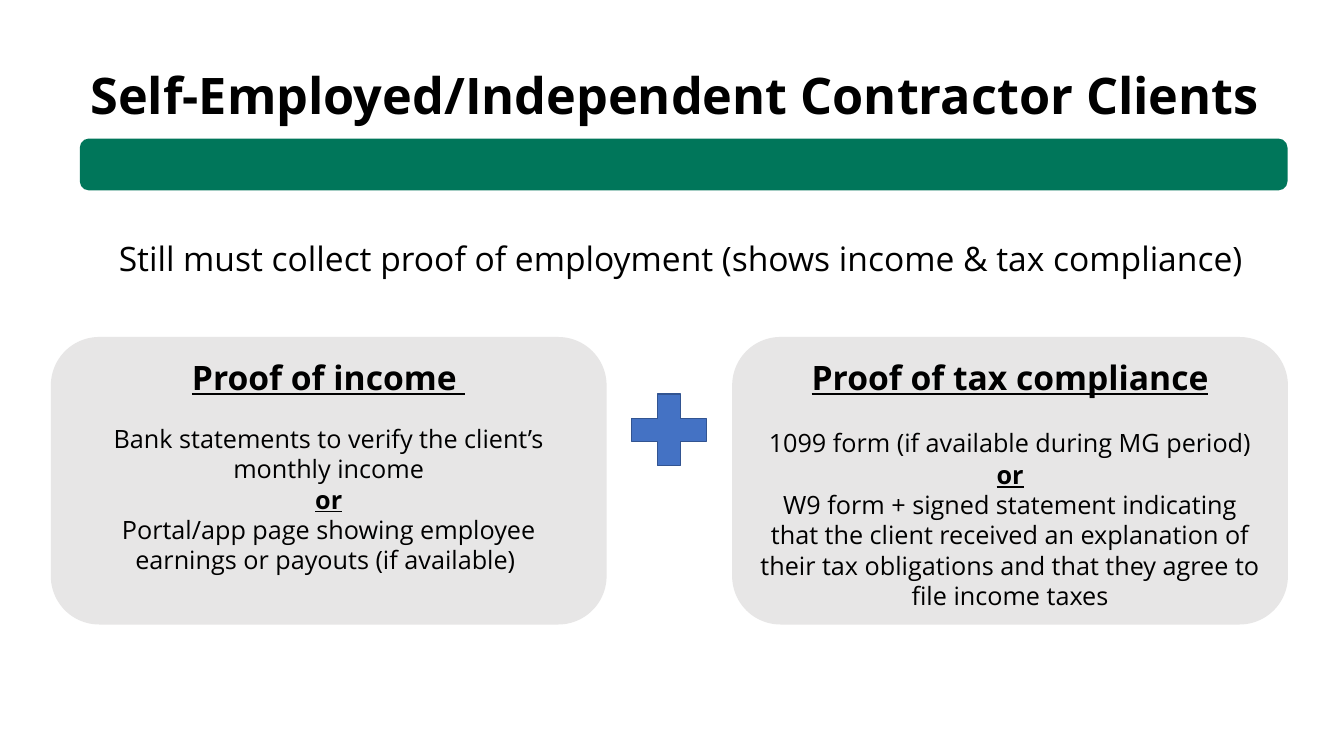
from dataclasses import dataclass

from pptx import Presentation
from pptx.dml.color import RGBColor
from pptx.enum.shapes import MSO_SHAPE
from pptx.enum.text import MSO_ANCHOR, PP_ALIGN
from pptx.util import Cm, Pt


@dataclass(frozen=True)
class Theme:
    font: str = "Open Sans"
    ink: str = "000000"
    green: str = "00765A"
    grey: str = "E7E6E6"
    blue: str = "4472C4"
    blue_edge: str = "325491"
    title_size: int = 36
    heading_size: int = 24
    body_size: int = 18


def write(paragraph, text, theme, size, strong=False, underline=False,
          align=PP_ALIGN.CENTER, gap_after=0):
    paragraph.alignment = align
    paragraph.space_after = Pt(gap_after)
    run = paragraph.add_run()
    run.text = text
    run.font.name = theme.font
    run.font.size = Pt(size)
    run.font.bold = strong
    run.font.underline = underline
    run.font.color.rgb = RGBColor.from_string(theme.ink)


class SlideBuilder:
    def __init__(self, slide, theme):
        self.slide = slide
        self.theme = theme

    def text(self, box, text, size, **style):
        frame = self.slide.shapes.add_textbox(*map(Cm, box)).text_frame
        frame.word_wrap = True
        write(frame.paragraphs[0], text, self.theme, size, **style)

    def shape(self, kind, box, fill, edge):
        shape = self.slide.shapes.add_shape(kind, *map(Cm, box))
        shape.shadow.inherit = False
        shape.fill.solid()
        shape.fill.fore_color.rgb = RGBColor.from_string(fill)
        shape.line.color.rgb = RGBColor.from_string(edge)
        shape.line.width = Pt(1)
        return shape

    def card(self, box, heading, options, heading_gap, option_gap):
        theme = self.theme
        card = self.shape(MSO_SHAPE.ROUNDED_RECTANGLE, box, theme.grey, theme.grey)
        frame = card.text_frame
        frame.word_wrap = True
        frame.vertical_anchor = MSO_ANCHOR.TOP
        write(frame.paragraphs[0], heading, theme, theme.heading_size,
              strong=True, underline=True, gap_after=heading_gap)
        first, joiner, second = options
        write(frame.add_paragraph(), first, theme, theme.body_size,
              gap_after=option_gap)
        write(frame.add_paragraph(), joiner, theme, theme.body_size,
              strong=True, underline=True)
        write(frame.add_paragraph(), second, theme, theme.body_size)


def main():
    deck = Presentation()
    deck.slide_width = Cm(33.87)
    deck.slide_height = Cm(19.05)
    theme = Theme()
    builder = SlideBuilder(deck.slides.add_slide(deck.slide_layouts[6]), theme)

    builder.text((2.03, 1.5, 31.83, 1.8),
                 "Self-Employed/Independent Contractor Clients",
                 theme.title_size, strong=True, align=PP_ALIGN.LEFT)
    builder.shape(MSO_SHAPE.ROUNDED_RECTANGLE, (2.03, 3.51, 30.4, 1.27),
                  theme.green, theme.green)
    builder.text((1.88, 5.87, 30.56, 1.27),
                 "Still must collect proof of employment (shows income & tax compliance)",
                 theme.heading_size)

    proofs = [
        ("Proof of income ",
         ("Bank statements to verify the client’s monthly income",
          "or",
          "Portal/app page showing employee earnings or payouts (if available) "),
         19, 0),
        ("Proof of tax compliance",
         ("1099 form (if available during MG period)",
          "or",
          "W9 form + signed statement indicating that the client received an "
          "explanation of their tax obligations and that they agree to file "
          "income taxes"),
         22, 1),
    ]
    for column, proof in enumerate(proofs):
        builder.card((1.3 + column * 17.17, 8.51, 13.97, 7.21), *proof)

    builder.shape(MSO_SHAPE.MATH_PLUS, (15.57, 9.6, 2.57, 2.46),
                  theme.blue, theme.blue_edge)
    deck.save("out.pptx")


if __name__ == "__main__":
    main()
